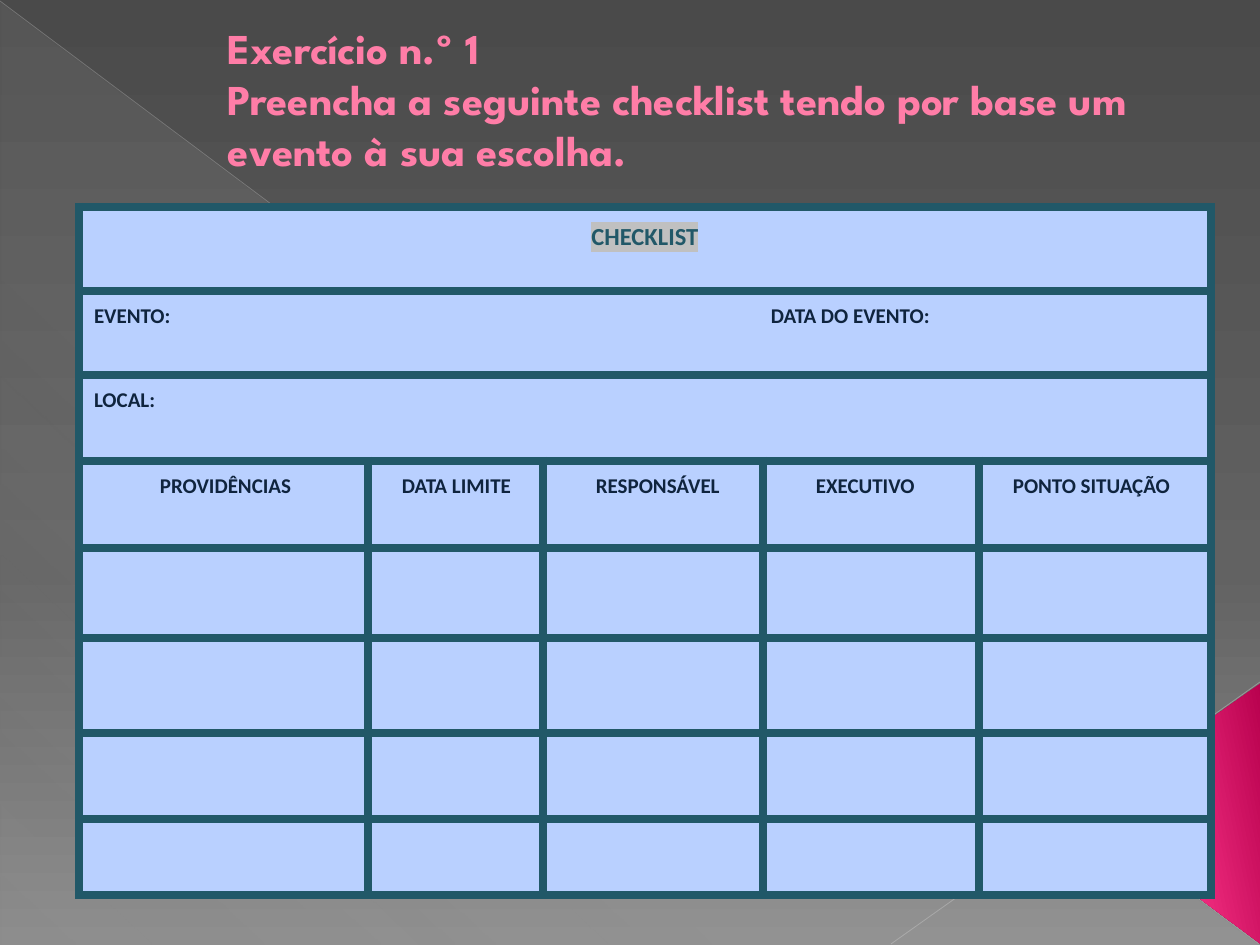
import pptx
import pptx.dml.color
import pptx.enum.shapes
import pptx.enum.text
import pptx.oxml
import pptx.oxml.ns
import pptx.util

EMU_PER_PX = 914400 / 126
CELL_FILL = "B9D0FF"
TEAL = "215868"
NAVY = "0F243E"
COLUMNS = [289, 175, 220, 216, 232]
ROWS = [84, 84, 86, 87, 90, 95, 86, 76]
HEADINGS = [
    ("PROVIDÊNCIAS", 81),
    ("DATA LIMITE", 34),
    ("RESPONSÁVEL", 53),
    ("EXECUTIVO", 53),
    ("PONTO SITUAÇÃO", 34),
]


def px(length):
    return pptx.util.Emu(round(length * EMU_PER_PX))


def color(value):
    return pptx.dml.color.RGBColor.from_string(value)


def xml(tag, body="", attributes=""):
    namespace = pptx.oxml.ns.nsdecls("a")
    return pptx.oxml.parse_xml(f"<a:{tag} {namespace} {attributes}>{body}</a:{tag}>")


def color_xml(value, alpha=100):
    return f'<a:srgbClr val="{value}"><a:alpha val="{alpha * 1000}"/></a:srgbClr>'


def solid_fill(element):
    return next(element.iter(pptx.oxml.ns.qn("a:solidFill")))


def paint_gradient(fill, element, stops, angle):
    fill.solid()
    marks = "".join(
        f'<a:gs pos="{place * 1000}">{color_xml(*paint)}</a:gs>' for place, *paint in stops
    )
    body = f'<a:gsLst>{marks}</a:gsLst><a:lin ang="{angle * 60000}" scaled="0"/>'
    solid = solid_fill(element)
    solid.getparent().replace(solid, xml("gradFill", body, 'rotWithShape="1"'))


def add_gradient_shape(page, kind, frame, stops, angle):
    shape = page.shapes.add_shape(kind, *map(px, frame))
    shape.shadow.inherit = False
    shape.line.fill.background()
    paint_gradient(shape.fill, shape.element, stops, angle)
    return shape


def add_line(page, ends, paint, alpha, width):
    line = page.shapes.add_connector(
        pptx.enum.shapes.MSO_CONNECTOR.STRAIGHT, *map(px, ends)
    )
    line.line.width = pptx.util.Pt(width)
    line.line.color.rgb = color(paint)
    solid = solid_fill(line.element)
    solid.getparent().replace(solid, xml("solidFill", color_xml(paint, alpha)))
    line.element.spPr.append(xml("effectLst"))


def add_span(para, text, font, size, paint):
    span = para.add_run()
    span.text = text
    span.font.size = pptx.util.Pt(size)
    span.font.bold = True
    span.font.color.rgb = color(paint)
    span.font.name = font
    return span


def add_title(page):
    box = page.shapes.add_textbox(px(228), px(22), px(1019), px(160))
    frame = box.text_frame
    frame.word_wrap = True
    frame.margin_left = frame.margin_right = 0
    frame.margin_top = frame.margin_bottom = 0
    para = frame.paragraphs[0]
    lines = [
        "Exercício n.º 1",
        "Preencha a seguinte checklist tendo por base um evento à sua escolha.",
    ]
    for index, text in enumerate(lines):
        if index:
            para.add_line_break()
        add_span(para, text, "League Spartan", 24.3, "FF7DA7")


def style_cell(cell):
    properties = cell._tc.get_or_add_tcPr()
    width = pptx.util.Pt(5.25)
    for side in "LRTB":
        body = f"<a:solidFill>{color_xml(TEAL)}</a:solidFill>"
        properties.append(xml(f"ln{side}", body, f'w="{width}"'))
    cell.fill.solid()
    cell.fill.fore_color.rgb = color(CELL_FILL)
    cell.margin_left = cell.margin_right = px(6)
    cell.margin_top = cell.margin_bottom = 0


def write_cell(cell, text, size=12, paint=NAVY, left=15, tab=None):
    cell.margin_left = px(left)
    para = cell.text_frame.paragraphs[0]
    para.line_spacing = 1.5
    para.space_after = pptx.util.Pt(10)
    if tab:
        stop = f'<a:tab pos="{px(tab)}" algn="l"/>'
        para._p.get_or_add_pPr().append(xml("tabLst", stop))
    return para, add_span(para, text, "Calibri", size, paint)


def add_checklist(page):
    table = page.shapes.add_table(
        len(ROWS), len(COLUMNS), px(79), px(207), px(sum(COLUMNS)), px(sum(ROWS))
    ).table
    table.first_row = table.horz_banding = False
    for column, width in zip(table.columns, COLUMNS):
        column.width = px(width)
    for row, height in zip(table.rows, ROWS):
        row.height = px(height)
    for cell in table.iter_cells():
        style_cell(cell)
    for row in range(3):
        table.cell(row, 0).merge(table.cell(row, len(COLUMNS) - 1))

    para, span = write_cell(table.cell(0, 0), "CHECKLIST", 14, TEAL, 6)
    para.alignment = pptx.enum.text.PP_ALIGN.CENTER
    solid_fill(span._r).addnext(xml("highlight", color_xml("C0C0C0")))
    write_cell(table.cell(1, 0), "EVENTO:\tDATA DO EVENTO:", tab=677)
    write_cell(table.cell(2, 0), "LOCAL:")
    for column, (text, left) in enumerate(HEADINGS):
        write_cell(table.cell(3, column), text, left=left)


def add_backdrop(page):
    shapes = pptx.enum.shapes.MSO_SHAPE
    paint_gradient(
        page.background.fill,
        page.element,
        [(0, "4A4A4A"), (60, "626262"), (100, "8C8C8C")],
        90,
    )
    add_gradient_shape(
        page,
        shapes.RIGHT_TRIANGLE,
        (1, 2, 1258, 943),
        [(0, "D2D2D2", 10), (70, "D2D2D2", 8), (100, "D2D2D2", 1)],
        133,
    )
    add_line(page, (0, 1, 1259, 944), "BFBFBF", 35, 0.39)
    add_line(page, (1260, 682, 891, 944), "C6C6C6", 45, 0.47)
    corner = add_gradient_shape(
        page,
        shapes.ISOSCELES_TRIANGLE,
        (1041, 724, 261, 179),
        [(0, "B8014E"), (60, "FF388C"), (100, "FF9CB9")],
        258,
    )
    corner.adjustments[0] = 0.51
    corner.rotation = 270


def main():
    deck = pptx.Presentation()
    deck.slide_width = px(1260)
    deck.slide_height = px(945)
    page = deck.slides.add_slide(deck.slide_layouts[6])
    add_backdrop(page)
    add_title(page)
    add_checklist(page)
    deck.save("out.pptx")


if __name__ == "__main__":
    main()
